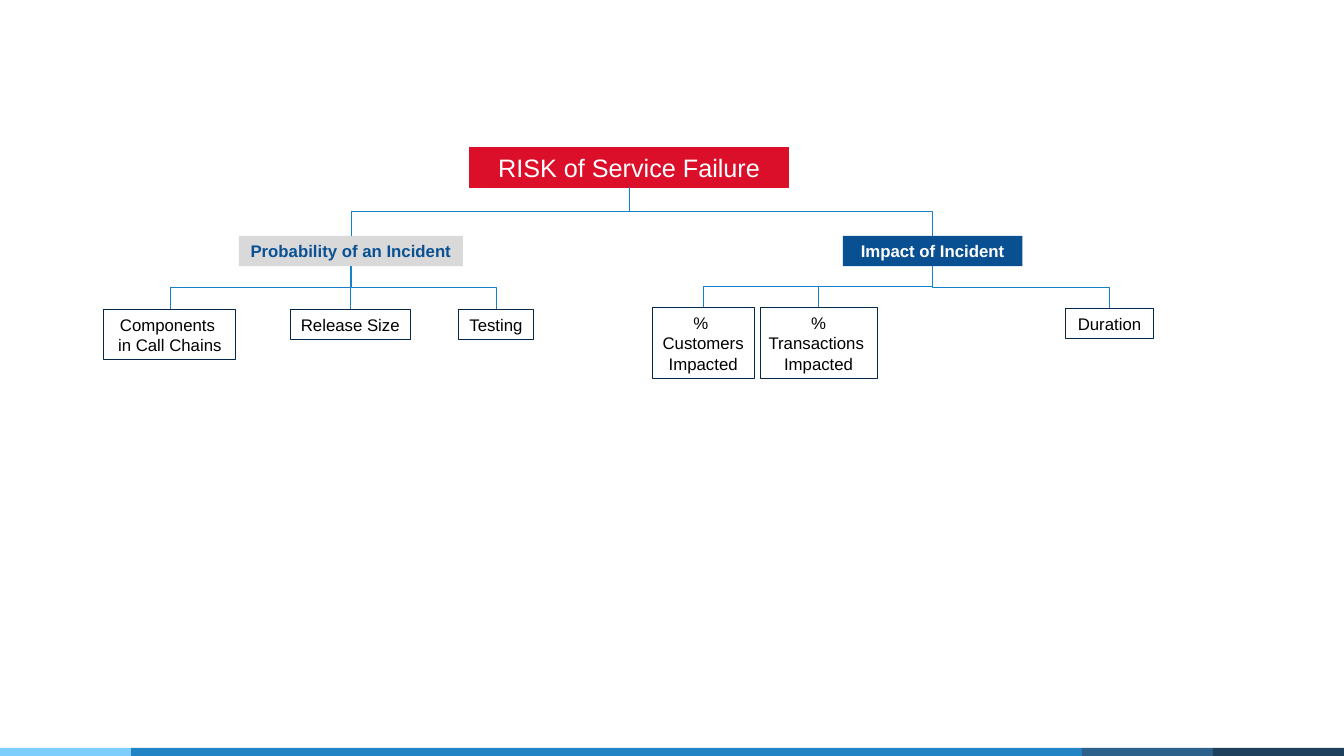
from lxml.etree import SubElement
from pptx import Presentation
from pptx.dml.color import RGBColor
from pptx.enum.shapes import MSO_CONNECTOR, MSO_SHAPE
from pptx.enum.text import MSO_ANCHOR, PP_ALIGN
from pptx.oxml.ns import qn
from pptx.util import Inches, Pt

COLORS = {
    "risk": "DB0F29", "probability": "D9D9D9", "impact": "095092",
    "heading": "0A5193", "white": "FFFFFF", "black": "000000",
    "border": "042849", "link": "1581C9",
    "sky": "7ECEFD", "blue": "2185C5", "steel": "2C618B", "navy": "1D405D",
}
BOTTOM_SITE, TOP_SITE = 2, 0


def rgb(name):
    """Return the named palette colour."""
    return RGBColor.from_string(COLORS[name])


def add_box(s, box, fill=None, line=None):
    """Add a plain rectangle at box, given in inches."""
    sp = s.shapes.add_shape(MSO_SHAPE.RECTANGLE, *map(Inches, box))
    sp.shadow.inherit = False
    if fill:
        sp.fill.solid()
        sp.fill.fore_color.rgb = rgb(fill)
    else:
        sp.fill.background()
    if line:
        sp.line.color.rgb = rgb(line)
        sp.line.width = Pt(0.75)
    else:
        sp.line.fill.background()
    return sp


def add_node(s, box, text, fill=None, line=None, color="black", size=12, bold=False):
    """Add a tree node with centred text."""
    sp = add_box(s, box, fill, line)
    tf = sp.text_frame
    tf.word_wrap = False
    tf.vertical_anchor = MSO_ANCHOR.MIDDLE
    tf.text = text
    for p in tf.paragraphs:
        p.alignment = PP_ALIGN.CENTER
        for r in p.runs:
            r.font.name = "Arial"
            r.font.size = Pt(size)
            r.font.bold = bold
            r.font.color.rgb = rgb(color)
    return sp


def add_link(s, parent, child):
    """Join the bottom of parent to the top of child with a turned elbow."""
    x1, y1 = parent.left + parent.width // 2, parent.top + parent.height
    x2, y2 = child.left + child.width // 2, child.top
    drop, reach = y2 - y1, abs(x2 - x1)
    cxn = s.shapes.add_connector(MSO_CONNECTOR.ELBOW, x1, y1, x2, y2)
    cxn.begin_connect(parent, BOTTOM_SITE)
    cxn.end_connect(child, TOP_SITE)
    cxn.left, cxn.top = (x1 + x2 - drop) // 2, (y1 + y2 - reach) // 2
    cxn.width, cxn.height = drop, reach
    xfrm = cxn._element.spPr.find(qn("a:xfrm"))
    to_right = x2 > x1
    xfrm.set("rot", str((270 if to_right else 90) * 60000))
    xfrm.set("flipH", "1" if to_right else "0")
    xfrm.set("flipV", "0")
    cxn.line.color.rgb = rgb("link")
    cxn.line.width = Pt(0.5)
    SubElement(cxn._element.spPr, qn("a:effectLst"))


def add_branch(s, root, head, leaves):
    """Add a heading under root and its bordered leaves."""
    add_link(s, root, head)
    for box, text in leaves:
        add_link(s, head, add_node(s, box, text, line="border"))


def add_risk_tree(s):
    """Add the risk tree with its two branches."""
    root = add_node(s, (4.66, 1.46, 3.16, 0.4), "RISK of Service Failure",
                    "risk", "risk", "white", 18)
    probability = add_node(s, (2.37, 2.34, 2.22, 0.3), "Probability of an Incident",
                           "probability", color="heading", bold=True)
    impact = add_node(s, (8.36, 2.34, 1.78, 0.3), "Impact of Incident",
                      "impact", color="white", bold=True)
    add_branch(s, root, probability, [
        ((1.03, 3.07, 1.31, 0.5), "Components \vin Call Chains"),
        ((2.88, 3.07, 1.19, 0.3), "Release Size"),
        ((4.55, 3.07, 0.74, 0.3), "Testing"),
    ])
    add_branch(s, root, impact, [
        ((6.47, 3.05, 1.01, 0.71), "% \vCustomers\nImpacted"),
        ((7.54, 3.05, 1.16, 0.71), "%\vTransactions \nImpacted"),
        ((10.57, 3.06, 0.87, 0.3), "Duration"),
    ])


def add_footer_bar(s, left, top, height):
    """Add the coloured strip from left along the slide bottom."""
    for width, fill in ((1.3, "sky"), (9.43, "blue"), (1.3, "steel"), (1.3, "navy")):
        add_box(s, (left, top, width, height), fill)
        left += width


def main():
    """Build and save the slide."""
    prs = Presentation()
    prs.slide_width, prs.slide_height = Inches(13.33), Inches(7.5)
    s = prs.slides.add_slide(prs.slide_layouts[6])
    add_footer_bar(s, 0, 7.42, 0.09)
    add_risk_tree(s)
    prs.save("out.pptx")


if __name__ == "__main__":
    main()
